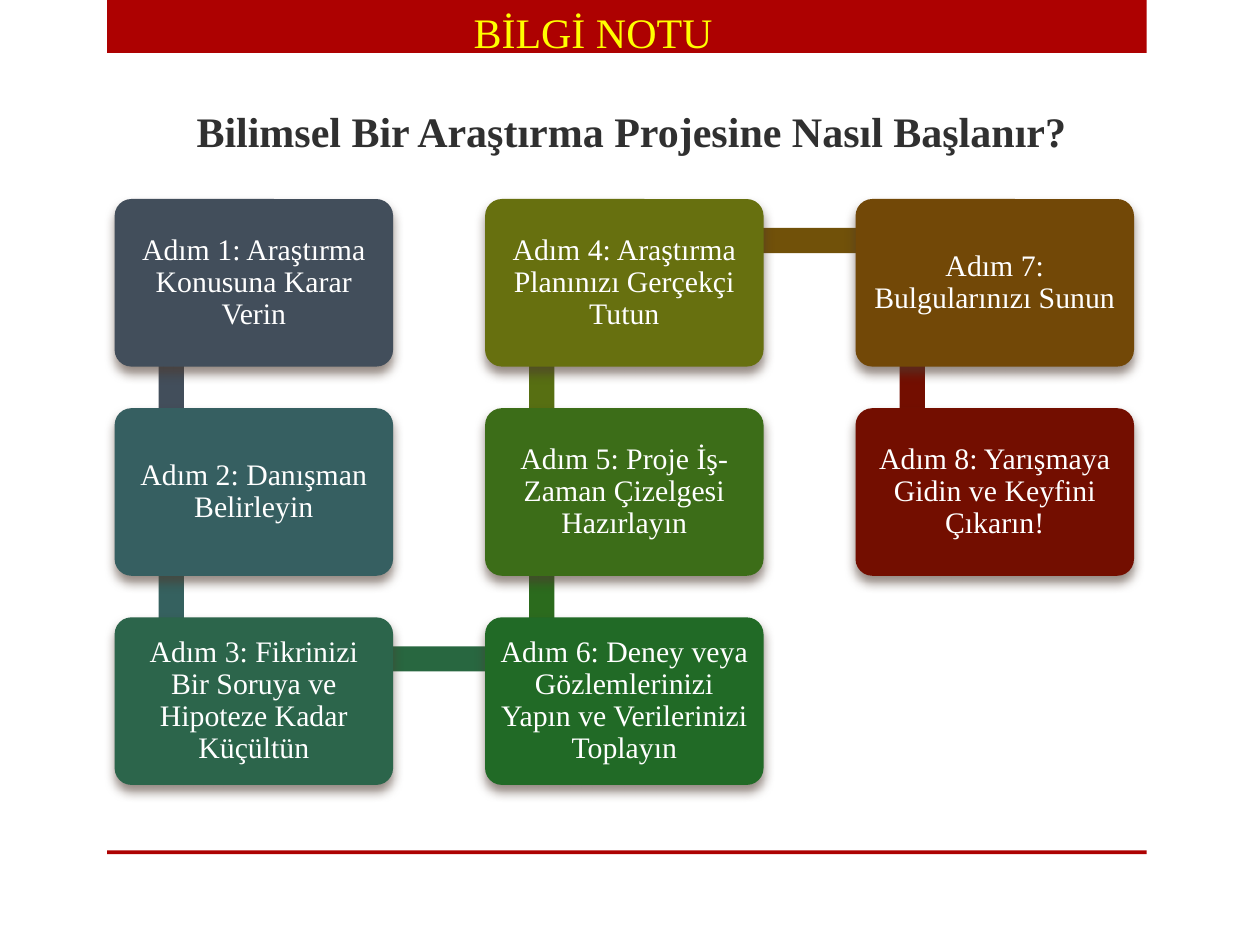
from dataclasses import dataclass
from itertools import pairwise

from lxml.etree import SubElement
from pptx import Presentation
from pptx.dml.color import RGBColor
from pptx.enum.shapes import MSO_SHAPE as Shape
from pptx.enum.text import MSO_ANCHOR as Anchor, MSO_AUTO_SIZE as AutoSize, PP_ALIGN as Align
from pptx.oxml.ns import qn
from pptx.util import Inches, Pt

FONT = "Times New Roman"
COLORS = {
    "band": "AD0101",
    "heading": "303030",
    "banner": "FFFF00",
    "card_text": "FFFFFF",
    "shadow": "4E3B30",
}
ROWS = 3
GRID_LEFT, GRID_TOP = 0.91, 1.58
COLUMN_PITCH, ROW_PITCH = 2.94, 1.66
CARD_WIDTH, CARD_HEIGHT = 2.21, 1.33
LINK_THICKNESS = 0.2
LINK_INSET_X, LINK_INSET_Y = 0.35, 0.23


@dataclass
class Step:
    text: str
    fill: str
    link_fill: str = ""


@dataclass
class Cell:
    column: int
    row: int

    @property
    def left(self) -> float:
        return GRID_LEFT + self.column * COLUMN_PITCH

    @property
    def top(self) -> float:
        return GRID_TOP + self.row * ROW_PITCH


STEPS = [
    Step("Adım 1: Araştırma Konusuna Karar Verin", "424E5B", "424E5B"),
    Step("Adım 2: Danışman Belirleyin", "365F61", "35615F"),
    Step("Adım 3: Fikrinizi Bir Soruya ve Hipoteze Kadar Küçültün", "2C654B", "286740"),
    Step("Adım 6: Deney veya Gözlemlerinizi Yapın ve Verilerinizi Toplayın", "216A26", "2B6B1D"),
    Step("Adım 5: Proje İş-Zaman Çizelgesi Hazırlayın", "3C6D18", "576F12"),
    Step("Adım 4: Araştırma Planınızı Gerçekçi Tutun", "67700F", "715109"),
    Step("Adım 7: Bulgularınızı Sunun", "724807", "730E00"),
    Step("Adım 8: Yarışmaya Gidin ve Keyfini Çıkarın!", "730E00"),
]


def serpentine_cell(index: int) -> Cell:
    column, row = divmod(index, ROWS)
    return Cell(column, ROWS - 1 - row if column % 2 else row)


def add_block(page, kind, left: float, top: float, width: float, height: float, fill: str):
    block = page.shapes.add_shape(kind, Inches(left), Inches(top), Inches(width), Inches(height))
    block.shadow.inherit = False
    block.fill.solid()
    block.fill.fore_color.rgb = RGBColor.from_string(fill)
    block.line.fill.background()
    return block


def write_text(box, text: str, size: float, color: str, bold: bool = False):
    box.text_frame.text = text
    para = box.text_frame.paragraphs[0]
    para.font.name = FONT
    para.font.size = Pt(size)
    para.font.bold = bold
    para.font.color.rgb = RGBColor.from_string(color)
    return para


def add_soft_shadow(block) -> None:
    effects = block._element.spPr.find(qn("a:effectLst"))
    shadow = SubElement(effects, qn("a:outerShdw"), blurRad=str(Pt(6)), dist=str(Pt(4)),
                        dir="5400000", rotWithShape="0")
    color = SubElement(shadow, qn("a:srgbClr"), val=COLORS["shadow"])
    SubElement(color, qn("a:alpha"), val="60000")


def add_link(page, start: Cell, end: Cell, fill: str) -> None:
    left, top = min(start.left, end.left), min(start.top, end.top)
    if start.column == end.column:
        add_block(page, Shape.RECTANGLE, left + LINK_INSET_X, top + CARD_HEIGHT / 2,
                  LINK_THICKNESS, ROW_PITCH, fill)
    else:
        add_block(page, Shape.RECTANGLE, left + CARD_WIDTH / 2, top + LINK_INSET_Y,
                  COLUMN_PITCH, LINK_THICKNESS, fill)


def add_card(page, cell: Cell, step: Step) -> None:
    card = add_block(page, Shape.ROUNDED_RECTANGLE, cell.left, cell.top,
                     CARD_WIDTH, CARD_HEIGHT, step.fill)
    card.adjustments[0] = 0.1
    add_soft_shadow(card)
    frame = card.text_frame
    frame.word_wrap = True
    frame.vertical_anchor = Anchor.MIDDLE
    frame.margin_left = frame.margin_right = Inches(0.07)
    frame.margin_top = frame.margin_bottom = Inches(0.07)
    para = write_text(card, step.text, 17, COLORS["card_text"])
    para.alignment = Align.CENTER
    para.line_spacing = 0.9


def add_heading(page) -> None:
    title = page.shapes.title
    title.left, title.top = Inches(1.46), Inches(0.52)
    title.width, title.height = Inches(8.25), Inches(1.03)
    title.text_frame.auto_size = AutoSize.NONE
    title.text_frame.vertical_anchor = Anchor.MIDDLE
    para = write_text(title, "Bilimsel Bir Araştırma Projesine Nasıl Başlanır?", 24,
                      COLORS["heading"], bold=True)
    para.alignment = Align.LEFT


def add_banner(page) -> None:
    banner = page.shapes.add_textbox(Inches(3.66), Inches(0), Inches(4.88), Inches(0.5))
    banner.text_frame.word_wrap = True
    write_text(banner, "BİLGİ NOTU", 24, COLORS["banner"])


def main() -> None:
    deck = Presentation()
    deck.slide_width, deck.slide_height = Inches(10), Inches(7.5)
    page = deck.slides.add_slide(deck.slide_layouts.get_by_name("Title Only"))
    for top, height in ((0, 0.42), (6.75, 0.03)):
        add_block(page, Shape.RECTANGLE, 0.85, top, 8.25, height, COLORS["band"])
    add_heading(page)
    cells = [serpentine_cell(index) for index in range(len(STEPS))]
    for step, (start, end) in zip(STEPS, pairwise(cells)):
        add_link(page, start, end, step.link_fill)
    for cell, step in zip(cells, STEPS):
        add_card(page, cell, step)
    add_banner(page)
    deck.save("out.pptx")


if __name__ == "__main__":
    main()
